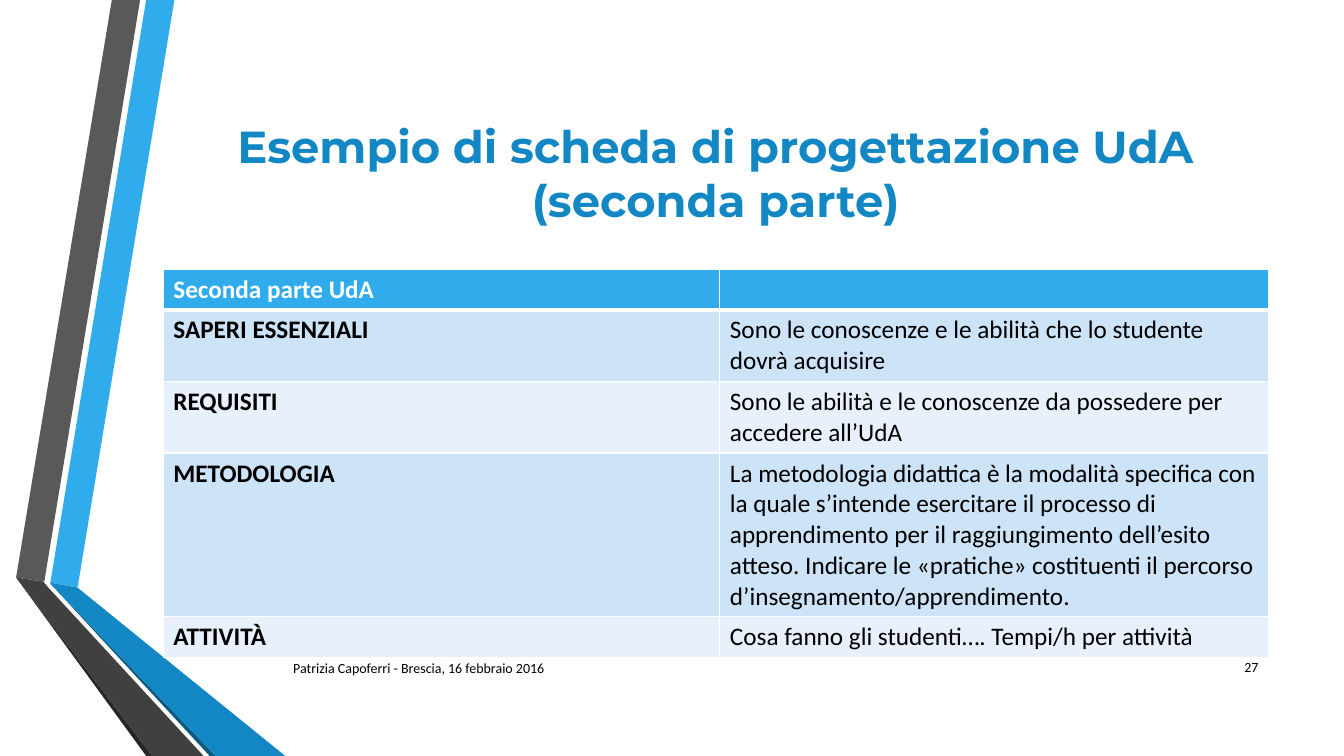
from lxml import etree
from pptx import Presentation
from pptx.dml.color import RGBColor
from pptx.enum.text import MSO_ANCHOR, PP_ALIGN
from pptx.oxml.ns import qn
from pptx.util import Emu, Inches, Pt

MIDDLE = MSO_ANCHOR.MIDDLE
LEFT, CENTER, RIGHT = PP_ALIGN.LEFT, PP_ALIGN.CENTER, PP_ALIGN.RIGHT

WIDTH, HEIGHT = 13.33, 7.5
CONTENT_LEFT, CONTENT_WIDTH = 1.62, 10.96
TITLE_TOP, TITLE_HEIGHT = 0.75, 1.92
FOOTER_TOP, FOOTER_HEIGHT = 6.43, 0.4
LEFT_COLUMN_SHARE = 5.52 / CONTENT_WIDTH
CELL_PADDING, LINE_HEIGHT = 0.1, 0.305

COLORS = {
    "white": "FFFFFF", "black": "000000",
    "sky": "30ACEC", "blue": "1287C3", "navy": "0C5A82",
    "gray": "595959", "charcoal": "404040", "soot": "262626",
    "band_dark": "CDE3F8", "band_light": "E8F1FB",
}

# Ribbon outlines as shares of a box given in inches
RIBBON_BOX = (0.16, 0, 2.67, HEIGHT)
RIBBONS = [
    ("sky", [(0.5, 5.78), (0.77, 5.83), (1.73, 0), (1.45, 0)]),
    ("gray", [(1.39, 0), (1.11, 0), (0.16, 5.73), (0.44, 5.77)]),
    ("soot", [(0.16, 5.73), (1.45, HEIGHT), (1.51, HEIGHT)]),
    ("navy", [(0.5, 5.79), (2.08, HEIGHT), (2.14, HEIGHT)]),
    ("blue", [(0.5, 5.78), (0.5, 5.79), (2.14, HEIGHT), (2.83, HEIGHT), (0.77, 5.83)]),
    ("charcoal", [(2.02, HEIGHT), (0.48, 5.83), (0.43, 5.77), (0.16, 5.73), (1.51, HEIGHT)]),
]

# Left text, right text, lines in the row
ROWS = [
    ("Seconda parte UdA", "", 1),
    ("SAPERI ESSENZIALI",
     "Sono le conoscenze e le abilità che lo studente dovrà acquisire", 2),
    ("REQUISITI",
     "Sono le abilità e le conoscenze da possedere per accedere all’UdA", 2),
    ("METODOLOGIA",
     "La metodologia didattica è la modalità specifica con la quale s’intende "
     "esercitare il processo di apprendimento per il raggiungimento dell’esito "
     "atteso. Indicare le «pratiche» costituenti il percorso "
     "d’insegnamento/apprendimento.", 5),
    ("ATTIVITÀ", "Cosa fanno gli studenti…. Tempi/h per attività", 1),
]


def rgb(name):
    return RGBColor.from_string(COLORS[name])


def style_font(paragraph, size, color, bold=False, name="Calibri"):
    font = paragraph.font
    font.size, font.bold, font.name = Pt(size), bold, name
    font.color.rgb = rgb(color)


def add_text(slide, box, text, align, size, color, bold=False, name="Calibri"):
    frame = slide.shapes.add_textbox(*map(Inches, box)).text_frame
    frame.word_wrap = True
    frame.vertical_anchor = MIDDLE
    paragraph = frame.paragraphs[0]
    paragraph.text = text
    paragraph.alignment = align
    style_font(paragraph, size, color, bold, name)


def add_ribbons(slide, box):
    """Folded bands, drawn in the box's own proportions."""
    left, top, width, height = box
    base_left, base_top, base_width, base_height = RIBBON_BOX
    for color, outline in RIBBONS:
        points = [(Inches(left + (x - base_left) / base_width * width),
                   Inches(top + (y - base_top) / base_height * height))
                  for x, y in outline]
        builder = slide.shapes.build_freeform(*points[0])
        builder.add_line_segments(points[1:], close=True)
        shape = builder.convert_to_shape()
        shape.shadow.inherit = False
        shape.fill.solid()
        shape.fill.fore_color.rgb = rgb(color)
        shape.line.fill.background()


def set_borders(cell, widths):
    properties = cell._tc.get_or_add_tcPr()
    for index, (side, width) in enumerate(widths.items()):
        line = etree.Element(qn(f"a:{side}"), w=str(Pt(width)))
        fill = etree.SubElement(line, qn("a:solidFill"))
        etree.SubElement(fill, qn("a:srgbClr"), val=COLORS["white"])
        properties.insert(index, line)


def add_plan_table(slide, box):
    left, top, width = box
    heights = [CELL_PADDING + LINE_HEIGHT * lines for *_, lines in ROWS]
    table = slide.shapes.add_table(
        len(ROWS), 2, *map(Inches, (left, top, width, sum(heights)))).table
    table.columns[0].width = Inches(width * LEFT_COLUMN_SHARE)
    table.columns[1].width = Emu(Inches(width) - table.columns[0].width)
    for row, (*texts, _) in enumerate(ROWS):
        table.rows[row].height = Inches(heights[row])
        header = row == 0
        band = "sky" if header else ("band_light", "band_dark")[row % 2]
        for column, text in enumerate(texts):
            cell = table.cell(row, column)
            cell.fill.solid()
            cell.fill.fore_color.rgb = rgb(band)
            paragraph = cell.text_frame.paragraphs[0]
            paragraph.text = text
            style_font(paragraph, 18, "white" if header else "black",
                       bold=header or column == 0)
            set_borders(cell, {"lnL": 1, "lnR": 1,
                               "lnT": 3 if row == 1 else 1,
                               "lnB": 3 if header else 1})


def add_footer(slide, box):
    left, top, width, height = box
    note_left, number_width = left + 1.19, 0.6
    add_text(slide, (note_left, top, 7.75, height),
             "Patrizia Capoferri - Brescia, 16 febbraio 2016", LEFT, 10, "black")
    add_text(slide, (left + width - number_width, top - 0.01, number_width, height),
             "27", RIGHT, 10, "black")


def main():
    presentation = Presentation()
    presentation.slide_width, presentation.slide_height = Inches(WIDTH), Inches(HEIGHT)
    slide = presentation.slides.add_slide(presentation.slide_layouts[6])

    # Decoration
    add_ribbons(slide, RIBBON_BOX)
    # Title
    add_text(slide, (CONTENT_LEFT, TITLE_TOP, CONTENT_WIDTH, TITLE_HEIGHT),
             "Esempio di scheda di progettazione UdA (seconda parte)",
             CENTER, 32, "blue", bold=True, name="Montserrat")
    # Table directly below the title
    add_plan_table(slide, (CONTENT_LEFT, TITLE_TOP + TITLE_HEIGHT, CONTENT_WIDTH))
    # Footer
    add_footer(slide, (CONTENT_LEFT, FOOTER_TOP, CONTENT_WIDTH, FOOTER_HEIGHT))

    presentation.save("out.pptx")


if __name__ == "__main__":
    main()
